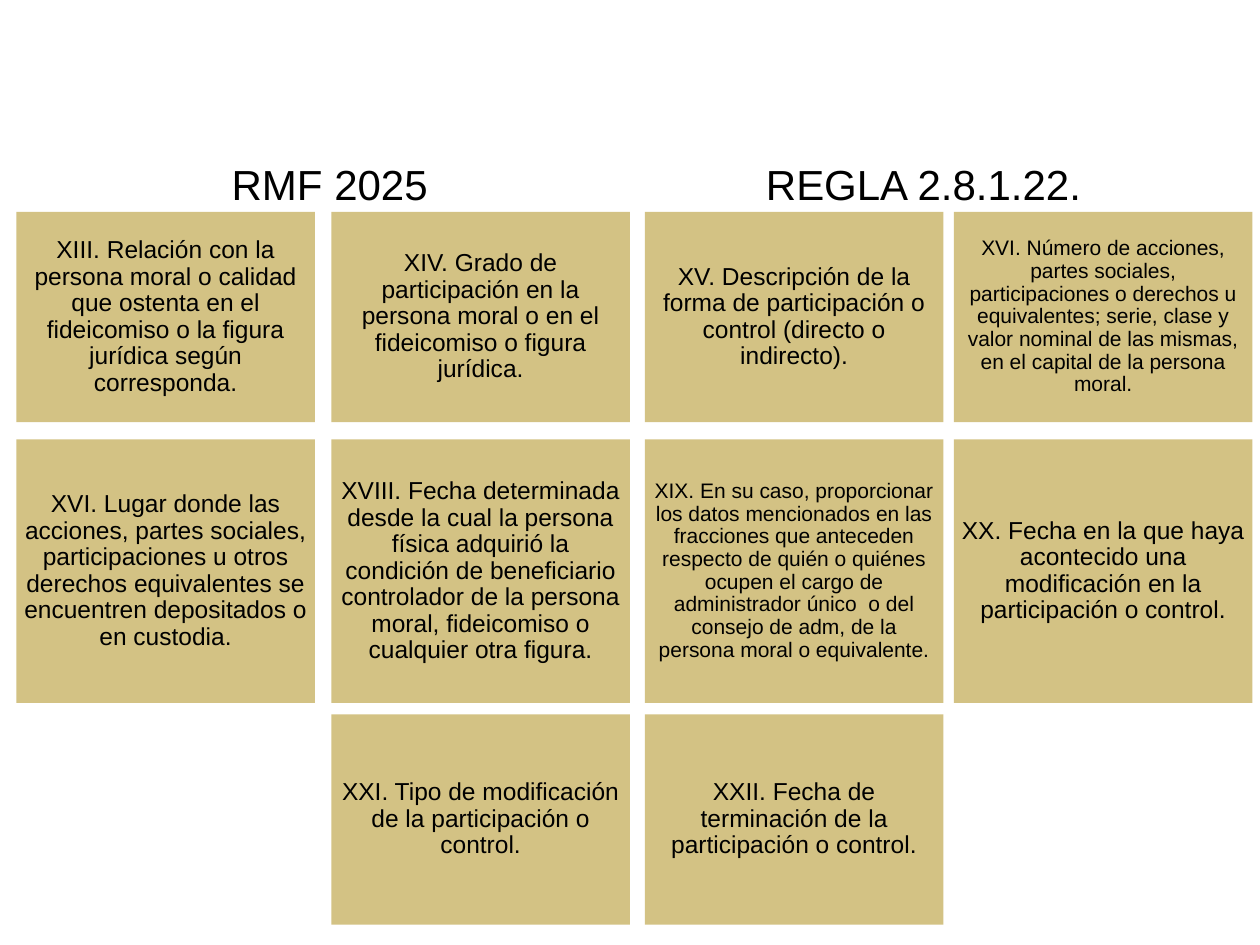
from typing import NamedTuple

from lxml.etree import SubElement
from pptx import Presentation
from pptx.dml.color import RGBColor
from pptx.enum.shapes import MSO_SHAPE
from pptx.enum.text import MSO_ANCHOR, MSO_AUTO_SIZE, PP_ALIGN
from pptx.oxml.ns import qn
from pptx.util import Cm, Pt

SAND = RGBColor(0xD3, 0xC2, 0x84)
BLACK = RGBColor(0, 0, 0)
FONT = "Arial"

# Grid in centimetres: left edges, and (top, height) of each row
COLS = (0.33, 6.68, 13.0, 19.23)
ROWS = ((4.27, 4.24), (8.86, 5.31), (14.4, 4.24))
WIDTH = 6.02
INSET = 0.13


class Card(NamedTuple):
    row: int
    col: int
    text: str
    size: int = 14


CARDS = (
    Card(0, 0, "XIII. Relación con la persona moral o calidad que ostenta en el "
               "fideicomiso o la figura jurídica según corresponda."),
    Card(0, 1, "XIV. Grado de participación en la persona moral o en el "
               "fideicomiso o figura jurídica."),
    Card(0, 2, "XV. Descripción de la forma de participación o control "
               "(directo o indirecto)."),
    Card(0, 3, "XVI. Número de acciones, partes sociales, participaciones o "
               "derechos u equivalentes; serie, clase y valor nominal de las "
               "mismas, en el capital de la persona moral.", 12),
    Card(1, 0, "XVI. Lugar donde las acciones, partes sociales, participaciones "
               "u otros derechos equivalentes se encuentren depositados o en "
               "custodia."),
    Card(1, 1, "XVIII. Fecha determinada desde la cual la persona física adquirió "
               "la condición de beneficiario controlador de la persona moral, "
               "fideicomiso o cualquier otra figura."),
    Card(1, 2, "XIX. En su caso, proporcionar los datos mencionados en las "
               "fracciones que anteceden respecto de quién o quiénes ocupen el "
               "cargo de administrador único  o del consejo de adm, de la persona "
               "moral o equivalente.", 12),
    Card(1, 3, "XX. Fecha en la que haya acontecido una modificación en la "
               "participación o control."),
    Card(2, 1, "XXI. Tipo de modificación de la participación o control."),
    Card(2, 2, "XXII. Fecha de terminación de la participación o control."),
)


def style(para, size: int, align: PP_ALIGN) -> None:
    para.alignment = align
    para.font.name = FONT
    para.font.size = Pt(size)
    para.font.color.rgb = BLACK


def draw_title(slide) -> None:
    title = slide.shapes.title
    title.left, title.top = Cm(4.06), Cm(3.07)
    title.width, title.height = Cm(18.62), Cm(1.27)
    frame = title.text_frame
    frame.auto_size = MSO_AUTO_SIZE.NONE
    frame.vertical_anchor = MSO_ANCHOR.TOP
    frame.margin_left = Cm(0.61)
    para = frame.paragraphs[0]
    para.text = "RMF 2025\tREGLA 2.8.1.22."
    # A tab stop sets the second heading over the right half
    tabs = SubElement(para._p.get_or_add_pPr(), qn("a:tabLst"))
    SubElement(tabs, qn("a:tab"), pos=str(Cm(10.77)), algn="l")
    style(para, 24, PP_ALIGN.LEFT)


def draw_card(slide, card: Card) -> None:
    top, height = ROWS[card.row]
    box = slide.shapes.add_shape(
        MSO_SHAPE.RECTANGLE, Cm(COLS[card.col]), Cm(top), Cm(WIDTH), Cm(height))
    box.shadow.inherit = False
    box.fill.solid()
    box.fill.fore_color.rgb = SAND
    box.line.fill.background()
    frame = box.text_frame
    frame.word_wrap = True
    frame.vertical_anchor = MSO_ANCHOR.MIDDLE
    frame.margin_left = frame.margin_right = Cm(INSET)
    frame.margin_top = frame.margin_bottom = Cm(INSET)
    para = frame.paragraphs[0]
    para.text = card.text
    para.line_spacing = 0.9
    style(para, card.size, PP_ALIGN.CENTER)


def main() -> None:
    deck = Presentation()
    deck.slide_width, deck.slide_height = Cm(25.4), Cm(19.05)
    slide = deck.slides.add_slide(deck.slide_layouts[5])
    draw_title(slide)
    for card in CARDS:
        draw_card(slide, card)
    deck.save("out.pptx")


if __name__ == "__main__":
    main()
